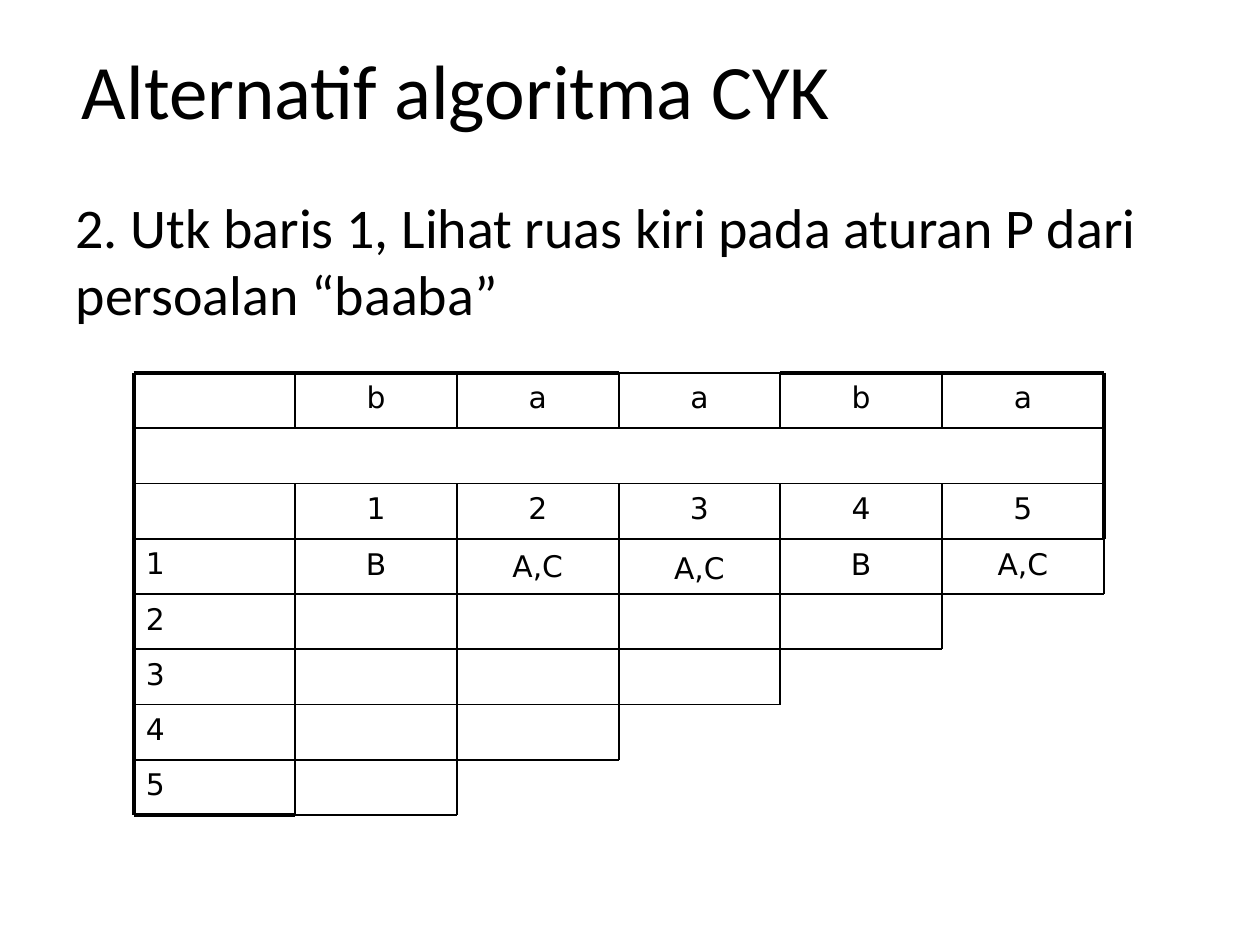
from lxml.etree import SubElement
from pptx import Presentation
from pptx.dml.color import RGBColor
from pptx.enum.shapes import MSO_CONNECTOR
from pptx.enum.text import MSO_ANCHOR, MSO_AUTO_SIZE, PP_ALIGN
from pptx.oxml.ns import qn
from pptx.util import Inches, Pt

COLORS = {"text": "000000", "line": "000000"}
THIN, THICK = 1, 2.25
COLUMNS, ROWS = 6, 8


def write_text(shape, text, size, font, align=PP_ALIGN.LEFT, anchor=MSO_ANCHOR.TOP, bullet=True):
    frame = shape.text_frame
    frame.word_wrap = True
    frame.auto_size = MSO_AUTO_SIZE.NONE
    frame.vertical_anchor = anchor
    para = frame.paragraphs[0]
    if not bullet:
        properties = para._p.get_or_add_pPr()
        properties.set("marL", "0")
        properties.set("indent", "0")
        SubElement(properties, qn("a:buNone"))
    para.alignment = align
    para.space_before = Pt(0)
    span = para.add_run()
    span.text = text
    span.font.size = Pt(size)
    span.font.name = font
    span.font.color.rgb = RGBColor.from_string(COLORS["text"])


def place(shape, left, top, width, height):
    shape.left, shape.top = Inches(left), Inches(top)
    shape.width, shape.height = Inches(width), Inches(height)


def add_heading(page, box):
    place(page.shapes.title, *box)
    write_text(page.shapes.title, "Alternatif algoritma CYK", 44, "Calibri",
               anchor=MSO_ANCHOR.MIDDLE)


def add_instruction(page, box):
    body = page.placeholders[1]
    place(body, *box)
    write_text(body, "2. Utk baris 1, Lihat ruas kiri pada aturan P dari persoalan “baaba”",
               32, "Calibri", bullet=False)


def grid_lines():
    """Give (start column, start row, end column, end row, width) for each line."""
    # Top edge and the two full-width rules
    lines = [(0, 0, 3, 0, THICK), (3, 0, 4, 0, THIN), (4, 0, 6, 0, THICK),
             (0, 1, 6, 1, THIN), (0, 2, 6, 2, THIN)]
    # Staircase rules, each in two parts that meet on the diagonal
    for row in range(3, ROWS):
        turn = ROWS - row
        lines += [(0, row, turn, row, THIN),
                  (turn, row, min(COLUMNS, turn + 2), row, THIN)]
    for column in range(1, COLUMNS):
        turn = ROWS - column
        lines += [(column, 0, column, 1, THIN), (column, 2, column, turn, THIN),
                  (column, turn, column, min(ROWS, turn + 2), THIN)]
    # Left, right and bottom edges
    for column, last in ((0, ROWS), (COLUMNS, 3)):
        lines += [(column, 0, column, 1, THICK), (column, 1, column, 2, THICK),
                  (column, 2, column, last, THICK)]
    return lines + [(6, 3, 6, 4, THIN), (0, 8, 1, 8, THICK), (1, 8, 2, 8, THIN)]


def add_triangle(page, box):
    left, top, width, height = box
    cell_width, cell_height = width / COLUMNS, height / ROWS
    group = page.shapes.add_group_shape()

    def point(column, row):
        return Inches(left + column * cell_width), Inches(top + row * cell_height)

    def add_cell(column, row, text, align=PP_ALIGN.CENTER, drop=0):
        x, y = point(column, row)
        cell = group.shapes.add_textbox(x, y + Inches(drop),
                                        Inches(cell_width), Inches(cell_height))
        write_text(cell, text, 17, "DejaVu Sans", align=align)

    # Row numbers
    for number in range(1, 6):
        add_cell(0, number + 2, str(number), PP_ALIGN.LEFT)

    # Input letters and column numbers
    for column, letter in enumerate("baaba", 1):
        add_cell(column, 0, letter)
        add_cell(column, 2, str(column))

    # Grid
    for start_column, start_row, end_column, end_row, weight in grid_lines():
        line = group.shapes.add_connector(MSO_CONNECTOR.STRAIGHT,
                                          *point(start_column, start_row),
                                          *point(end_column, end_row))
        line.line.color.rgb = RGBColor.from_string(COLORS["line"])
        line.line.width = Pt(weight)
        SubElement(line._element.spPr, qn("a:effectLst"))

    # Variables that derive each letter
    first_row = [("B", 0.01), ("A,C", 0.02), ("A,C", 0.04), ("B", 0.01), ("A,C", 0.01)]
    for column, (variables, drop) in enumerate(first_row, 1):
        add_cell(column, 3, variables, drop=drop)


def main():
    deck = Presentation()
    deck.slide_width, deck.slide_height = Inches(10), Inches(7.5)
    page = deck.slides.add_slide(deck.slide_layouts[1])
    add_heading(page, (0.55, 0.08, 9, 1.25))
    add_instruction(page, (0.5, 1.48, 9, 5.22))
    add_triangle(page, (1.06, 2.96, 7.7, 3.51))
    deck.save("out.pptx")


if __name__ == "__main__":
    main()
